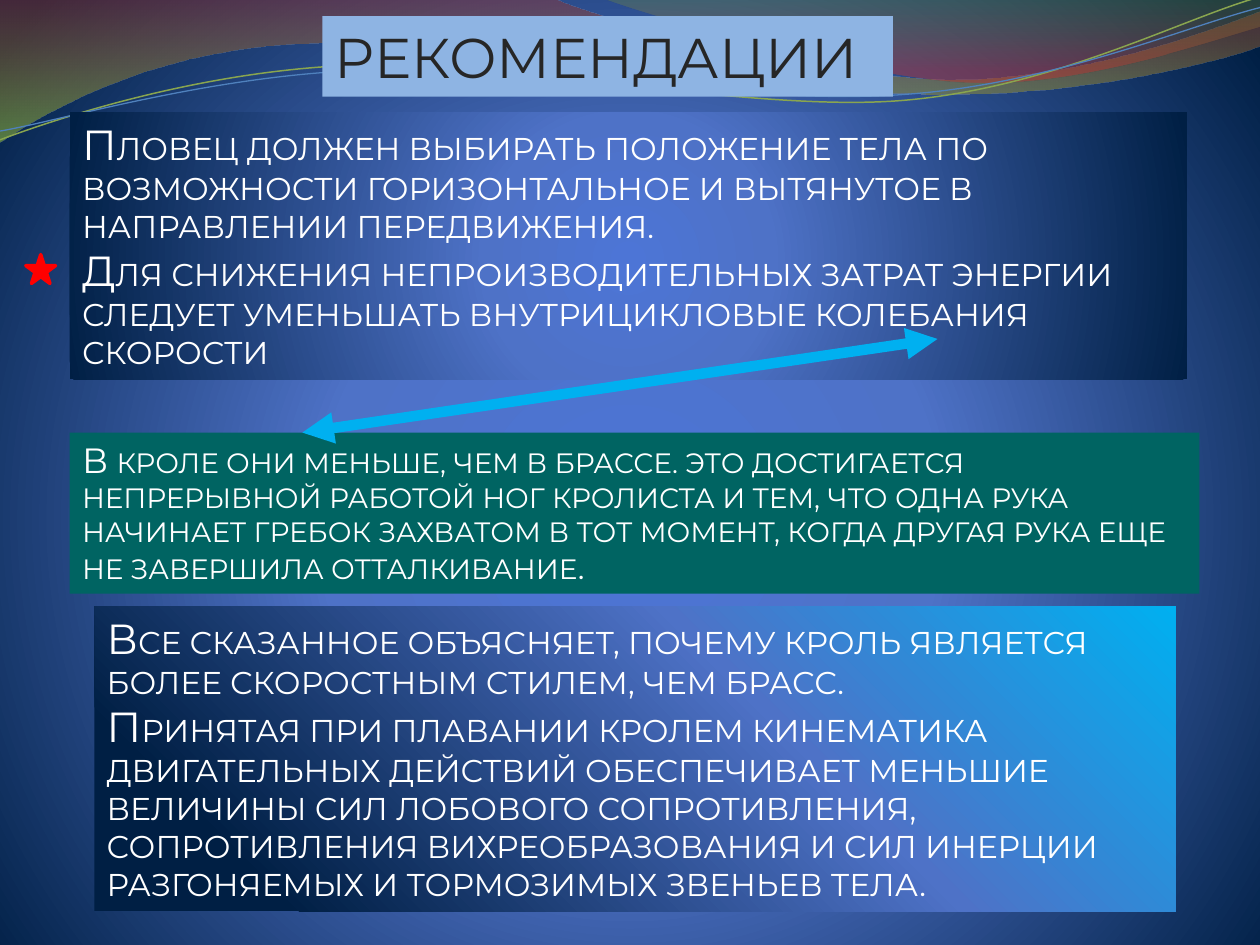
from lxml.etree import SubElement
from pptx import Presentation
from pptx.dml.color import RGBColor
from pptx.enum.shapes import MSO_CONNECTOR as CONNECTOR, MSO_SHAPE as SHAPE
from pptx.enum.text import MSO_ANCHOR as ANCHOR, MSO_AUTO_SIZE as AUTO, PP_ALIGN as ALIGN
from pptx.oxml.ns import qn
from pptx.util import Pt

FONT = "Montserrat"
GLOW = [(0, "4D75D6"), (39, "4E72C7"), (100, "001F44")]
PANEL_GLOW = [(0, "4D75D6"), (25, "4E72C7"), (100, "001F44")]
CORNER_GLOW = [(0, "00B0F0"), (37, "4E72C7"), (86, "001F44")]
TOP_CENTER = (10, 110, 10, 100)
TOP_RIGHT = (100, 0, 0, 100)

ADVICE = [
    [("П", 24), ("ЛОВЕЦ ДОЛЖЕН ВЫБИРАТЬ ПОЛОЖЕНИЕ ТЕЛА ПО ВОЗМОЖНОСТИ ГОРИЗОНТАЛЬНОЕ "
                 "И ВЫТЯНУТОЕ В НАПРАВЛЕНИИ ПЕРЕДВИЖЕНИЯ.", 18)],
    [("Д", 24), ("ЛЯ СНИЖЕНИЯ НЕПРОИЗВОДИТЕЛЬНЫХ ЗАТРАТ ЭНЕРГИИ СЛЕДУЕТ УМЕНЬШАТЬ "
                 "ВНУТРИЦИКЛОВЫЕ КОЛЕБАНИЯ СКОРОСТИ", 18)],
]
CRAWL = [
    [("В", 20), (" ", 18),
     ("КРОЛЕ ОНИ МЕНЬШЕ, ЧЕМ В БРАССЕ. ЭТО ДОСТИГАЕТСЯ НЕПРЕРЫВНОЙ РАБОТОЙ НОГ КРОЛИСТА "
      "И ТЕМ, ЧТО ОДНА РУКА НАЧИНАЕТ ГРЕБОК ЗАХВАТОМ В ТОТ МОМЕНТ, КОГДА ДРУГАЯ РУКА ЕЩЕ "
      "НЕ ЗАВЕРШИЛА ОТТАЛКИВАНИЕ", 16), (".", 18)],
]
SUMMARY = [
    [("В", 24), ("СЕ СКАЗАННОЕ ОБЪЯСНЯЕТ, ПОЧЕМУ КРОЛЬ ЯВЛЯЕТСЯ БОЛЕЕ СКОРОСТНЫМ СТИЛЕМ, "
                 "ЧЕМ БРАСС.", 18)],
    [("П", 24), ("РИНЯТАЯ ПРИ ПЛАВАНИИ КРОЛЕМ КИНЕМАТИКА ДВИГАТЕЛЬНЫХ ДЕЙСТВИЙ ОБЕСПЕЧИВАЕТ "
                 "МЕНЬШИЕ ВЕЛИЧИНЫ СИЛ ЛОБОВОГО СОПРОТИВЛЕНИЯ, СОПРОТИВЛЕНИЯ ВИХРЕОБРАЗОВАНИЯ "
                 "И СИЛ ИНЕРЦИИ РАЗГОНЯЕМЫХ И ТОРМОЗИМЫХ ЗВЕНЬЕВ ТЕЛА.", 18)],
]

WIDE_WAVE = [
    (0, 0), (316.8, -0.7), (342.7, 12.2, 478.1, 45.4, 545.8, 45.4),
    (614.2, 45.4, 689.8, 18.7, 720, 6.5), (720.7, 25.9),
    (707.8, 31.7, 626.4, 54.7, 537.1, 54), (447.8, 54, 275, 20.2, 185, 24.5),
    (92.9, 25.9, 33.1, 59.8, -0.7, 81.4), (0, 0),
]
RIGHT_WAVE = [
    (344.9, -0.7), (366.5, 7.9, 491, 44.6, 553.7, 46.8),
    (616.3, 49.7, 691.9, 23, 720, 15.1), (720, 0), (344.9, -0.7),
]
GREEN_CURVE = [
    (0, 79.9), (34.6, 67, 113.8, 41, 199.4, 37.4),
    (284.4, 33.8, 427, 64.1, 513.4, 57.6), (599.8, 51.1, 675.4, 10.8, 718.6, -1.4),
]
BLUE_CURVE = [
    (0, 74.9), (33.8, 69.1, 118.1, 43.9, 203.8, 40.3),
    (290.2, 36.7, 429.8, 60.5, 516.2, 54), (601.9, 48.2, 677.5, 15.1, 720, 4.3),
]


def color(hex_code):
    """Turn a hex string into a colour."""
    return RGBColor.from_string(hex_code)


def set_gradient(fill, parent, stops, focus=None):
    """Fill with stops (percent, colour, opacity), downward or around a focus."""
    fill.gradient()
    grad = next(parent.iter(qn("a:gradFill")))
    for child in list(grad):
        grad.remove(child)
    stop_list = SubElement(grad, qn("a:gsLst"))
    for pos, hex_code, *opacity in stops:
        stop = SubElement(stop_list, qn("a:gs"), pos=str(pos * 1000))
        clr = SubElement(stop, qn("a:srgbClr"), val=hex_code)
        for value in opacity:
            SubElement(clr, qn("a:alpha"), val=str(value * 1000))
    if focus:
        radial = SubElement(grad, qn("a:path"), path="circle")
        sides = {side: str(v * 1000) for side, v in zip("ltrb", focus)}
        SubElement(radial, qn("a:fillToRect"), **sides)
    else:
        SubElement(grad, qn("a:lin"), ang="5400000", scaled="1")


def add_text(p, text, size=18, hex_code="FFFFFF"):
    """Add a formatted run to a paragraph."""
    r = p.add_run()
    r.text = text
    r.font.name, r.font.size = FONT, Pt(size)
    r.font.color.rgb = color(hex_code)


def bend_segments(sp, commands):
    """Merge each three line segments of a six-number command into a cubic curve."""
    segments = iter(list(sp.element.spPr.iter(qn("a:lnTo"))))
    for command in commands[1:]:
        first = next(segments)
        if len(command) == 6:
            first.tag = qn("a:cubicBezTo")
            for _ in range(2):
                extra = next(segments)
                first.append(extra[0])
                extra.getparent().remove(extra)


def add_wave(s, commands, stops=None, line=None):
    """Draw a filled wave or an open curve."""
    points = [(Pt(x), Pt(y)) for c in commands for x, y in zip(c[::2], c[1::2])]
    builder = s.shapes.build_freeform(*points[0])
    builder.add_line_segments(points[1:], close=bool(stops))
    sp = builder.convert_to_shape()
    bend_segments(sp, commands)
    sp.shadow.inherit = False
    if stops:
        set_gradient(sp.fill, sp.element.spPr, stops)
        sp.line.fill.background()
    else:
        sp.fill.background()
        sp.line.color.rgb, sp.line.width = color(line[0]), Pt(line[1])


def add_title(s, box, text):
    """Place the title on its light blue band, above the waves."""
    sp = s.shapes.title
    sp.left, sp.top, sp.width, sp.height = map(Pt, box)
    sp.element.getparent().append(sp.element)
    sp.fill.solid()
    sp.fill.fore_color.rgb = color("8EB4E3")
    tf = sp.text_frame
    tf.auto_size, tf.word_wrap, tf.vertical_anchor = AUTO.NONE, True, ANCHOR.TOP
    p = tf.paragraphs[0]
    p.alignment = ALIGN.LEFT
    add_text(p, text, size=32, hex_code="262626")


def add_panel(s, box, paragraphs, fill=None, stops=None, focus=None):
    """Place a filled text panel."""
    sp = s.shapes.add_textbox(*map(Pt, box))
    if stops:
        set_gradient(sp.fill, sp.element.spPr, stops, focus)
    else:
        sp.fill.solid()
        sp.fill.fore_color.rgb = color(fill)
    tf = sp.text_frame
    tf.word_wrap, tf.auto_size = True, AUTO.SHAPE_TO_FIT_TEXT
    for i, runs in enumerate(paragraphs):
        p = tf.add_paragraph() if i else tf.paragraphs[0]
        for text, size in runs:
            add_text(p, text, size=size)


def add_star(s, box, hex_code):
    """Place a star marker."""
    sp = s.shapes.add_shape(SHAPE.STAR_5_POINT, *map(Pt, box))
    sp.shadow.inherit = False
    sp.fill.solid()
    sp.fill.fore_color.rgb = sp.line.color.rgb = color(hex_code)
    sp.line.width = Pt(2)


def add_double_arrow(s, ends, hex_code, width):
    """Draw a straight arrow with a head at both ends."""
    arrow = s.shapes.add_connector(CONNECTOR.STRAIGHT, *map(Pt, ends))
    arrow.line.color.rgb, arrow.line.width = color(hex_code), Pt(width)
    ln = arrow.element.spPr.find(qn("a:ln"))
    for end in ("a:headEnd", "a:tailEnd"):
        SubElement(ln, qn(end), type="triangle")
    SubElement(arrow.element.spPr, qn("a:effectLst"))


def add_backdrop(s):
    """Fill the background and draw the waves along the top."""
    set_gradient(s.background.fill, s.element, GLOW, TOP_CENTER)
    add_wave(s, WIDE_WAVE, stops=[(0, "973330", 45), (100, "95C238", 55)])
    add_wave(s, RIGHT_WAVE, stops=[(0, "769537", 30), (80, "BE3330", 45)])
    add_wave(s, GREEN_CURVE, line=("89A54F", 0.85))
    add_wave(s, BLUE_CURVE, line=("4F81BD", 0.75))


def main():
    """Build the slide and save it."""
    prs = Presentation()
    prs.slide_width, prs.slide_height = Pt(720), Pt(540)
    s = prs.slides.add_slide(prs.slide_layouts[5])
    add_backdrop(s)
    add_panel(s, (39.8, 64.2, 638.5, 152.6), ADVICE, stops=PANEL_GLOW, focus=TOP_CENTER)
    add_panel(s, (53.9, 346.5, 618, 174.3), SUMMARY, stops=CORNER_GLOW, focus=TOP_RIGHT)
    add_title(s, (184.2, 9.2, 326, 46), "РЕКОМЕНДАЦИИ")
    add_panel(s, (39.8, 247.2, 645.6, 92), CRAWL, fill="006462")
    add_star(s, (14.8, 145.5, 17, 16.5), "FF0000")
    add_double_arrow(s, (535.7, 193.7, 172.8, 247.2), "00B0F0", 6)
    prs.save("out.pptx")


if __name__ == "__main__":
    main()
